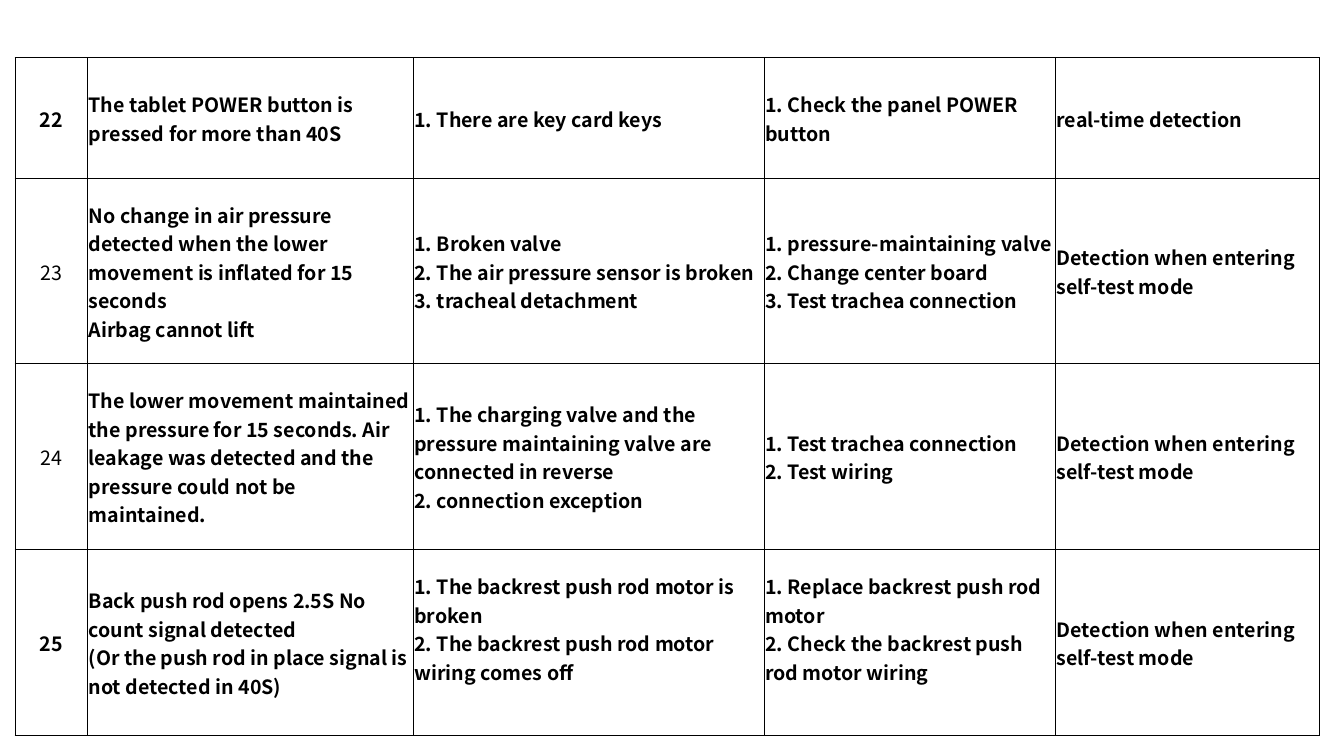
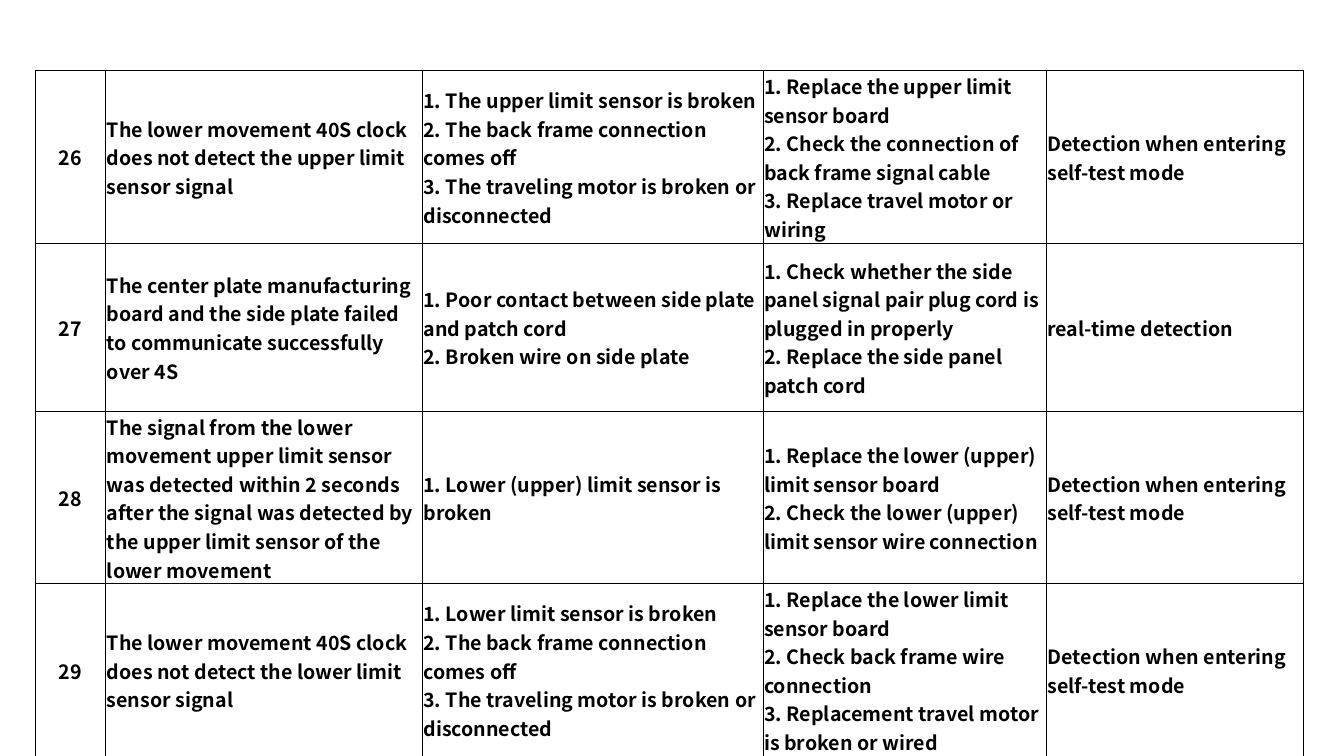
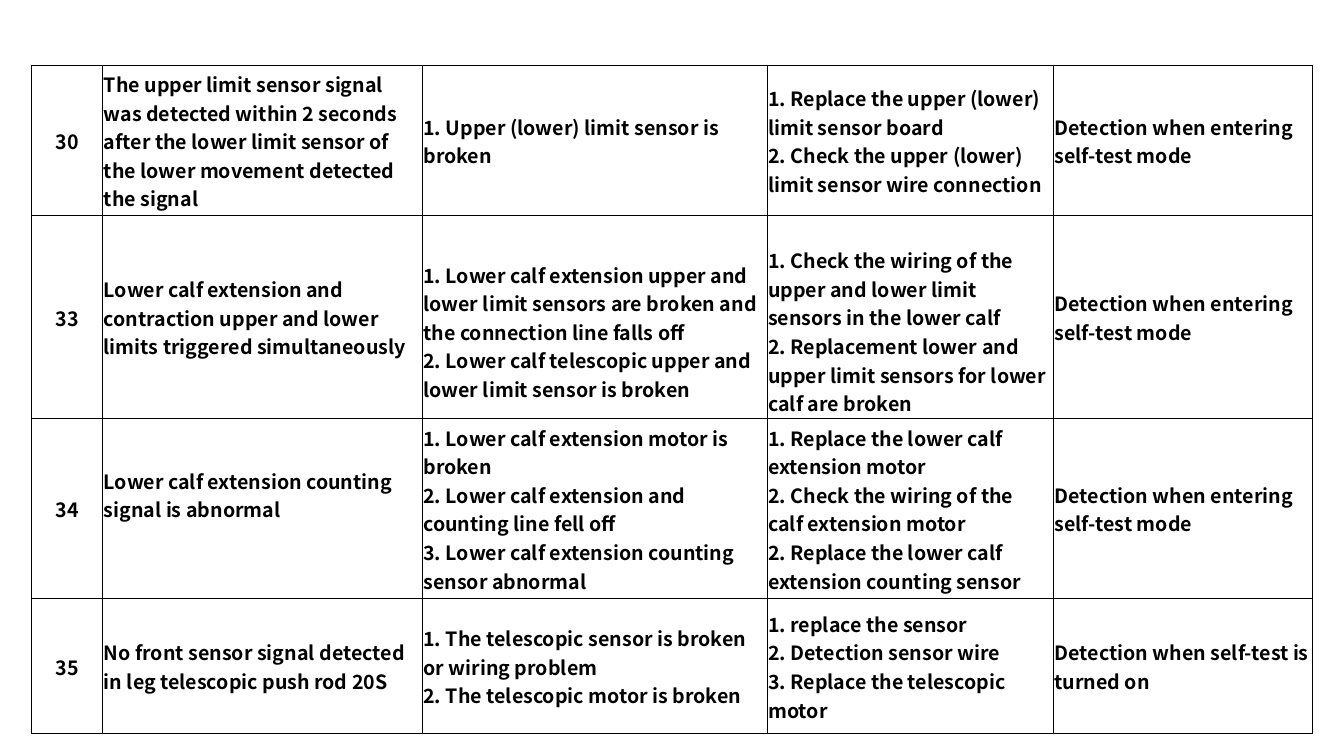
from dataclasses import dataclass

import pptx
import pptx.dml.color
import pptx.enum.text
import pptx.oxml
import pptx.oxml.ns
import pptx.util

PX = 9144  # EMU per px, 100 px to the inch


@dataclass(frozen=True)
class Theme:
    font: str = "Noto Sans CJK SC"
    size: int = 14
    ink: str = "000000"
    border_pt: float = 0.75
    inset: int = 1
    line: int = 28  # height of one text line, px


@dataclass(frozen=True)
class Fault:
    code: str
    symptom: str
    causes: str
    remedies: str
    timing: str
    bold_code: bool = True
    raised: tuple = ()   # columns with a free line below the text
    lowered: tuple = ()  # columns with a free line above the text


@dataclass(frozen=True)
class FaultTable:
    left: int
    top: int
    widths: tuple
    heights: tuple
    faults: tuple


THEME = Theme()
CODE, SYMPTOM, CAUSES, REMEDIES, TIMING = range(5)
SELF_TEST = "Detection when entering self-test mode"
REAL_TIME = "real-time detection"

# Content, one table to a slide
TABLES = (
    FaultTable(15, 57, (72, 323, 348, 289, 262), (120, 184, 184, 185), (
        Fault("22", "The tablet POWER button is pressed for more than 40S",
              "1. There are key card keys",
              "1. Check the panel POWER button", REAL_TIME),
        Fault("23",
              "No change in air pressure detected when the lower movement "
              "is inflated for 15 seconds\nAirbag cannot lift",
              "1. Broken valve\n2. The air pressure sensor is broken\n"
              "3. tracheal detachment",
              "1. pressure-maintaining valve\n2. Change center board\n"
              "3. Test trachea connection", SELF_TEST, bold_code=False),
        Fault("24",
              "The lower movement maintained the pressure for 15 seconds. "
              "Air leakage was detected and the pressure could not be "
              "maintained.",
              "1. The charging valve and the pressure maintaining valve are "
              "connected in reverse\n2. connection exception",
              "1. Test trachea connection\n2. Test wiring",
              SELF_TEST, bold_code=False),
        Fault("25",
              "Back push rod opens 2.5S No count signal detected\n"
              "(Or the push rod in place signal is not detected in 40S)",
              "1. The backrest push rod motor is broken\n"
              "2. The backrest push rod motor wiring comes off",
              "1. Replace backrest push rod motor\n"
              "2. Check the backrest push rod motor wiring",
              SELF_TEST, raised=(CAUSES, REMEDIES)),
    )),
    FaultTable(35, 70, (70, 314, 338, 281, 255), (167,) * 4, (
        Fault("26",
              "The lower movement 40S clock does not detect the upper limit "
              "sensor signal",
              "1. The upper limit sensor is broken\n"
              "2. The back frame connection comes off\n"
              "3. The traveling motor is broken or disconnected",
              "1. Replace the upper limit sensor board\n"
              "2. Check the connection of back frame signal cable\n"
              "3. Replace travel motor or wiring", SELF_TEST),
        Fault("27",
              "The center plate manufacturing board and the side plate "
              "failed to communicate successfully over 4S",
              "1. Poor contact between side plate and patch cord\n"
              "2. Broken wire on side plate",
              "1. Check whether the side panel signal pair plug cord is "
              "plugged in properly\n2. Replace the side panel patch cord",
              REAL_TIME),
        Fault("28",
              "The signal from the lower movement upper limit sensor was "
              "detected within 2 seconds after the signal was detected by "
              "the upper limit sensor of the lower movement",
              "1. Lower (upper) limit sensor is broken",
              "1. Replace the lower (upper) limit sensor board\n"
              "2. Check the lower (upper) limit sensor wire connection",
              SELF_TEST),
        Fault("29",
              "The lower movement 40S clock does not detect the lower limit "
              "sensor signal",
              "1. Lower limit sensor is broken\n"
              "2. The back frame connection comes off\n"
              "3. The traveling motor is broken or disconnected",
              "1. Replace the lower limit sensor board\n"
              "2. Check back frame wire connection\n"
              "3. Replacement travel motor is broken or wired", SELF_TEST),
    )),
    FaultTable(31, 65, (71, 317, 342, 284, 257), (149, 201, 179, 134), (
        Fault("30",
              "The upper limit sensor signal was detected within 2 seconds "
              "after the lower limit sensor of the lower movement detected "
              "the signal",
              "1. Upper (lower) limit sensor is broken",
              "1. Replace the upper (lower) limit sensor board\n"
              "2. Check the upper (lower) limit sensor wire connection",
              SELF_TEST),
        Fault("33",
              "Lower calf extension and contraction upper and lower limits "
              "triggered simultaneously",
              "1. Lower calf extension upper and lower limit sensors are "
              "broken and the connection line falls off\n"
              "2. Lower calf telescopic upper and lower limit sensor is "
              "broken",
              "1. Check the wiring of the upper and lower limit sensors in "
              "the lower calf\n2. Replacement lower and upper limit sensors "
              "for lower calf are broken",
              SELF_TEST, lowered=(CAUSES, REMEDIES)),
        Fault("34", "Lower calf extension counting signal is abnormal",
              "1. Lower calf extension motor is broken\n"
              "2. Lower calf extension and counting line fell off\n"
              "3. Lower calf extension counting sensor abnormal",
              "1. Replace the lower calf extension motor\n"
              "2. Check the wiring of the calf extension motor\n"
              "2. Replace the lower calf extension counting sensor",
              SELF_TEST, raised=(SYMPTOM,)),
        Fault("35",
              "No front sensor signal detected in leg telescopic push rod "
              "20S",
              "1. The telescopic sensor is broken or wiring problem\n"
              "2. The telescopic motor is broken",
              "1. replace the sensor\n2. Detection sensor wire\n"
              "3. Replace the telescopic motor",
              "Detection when self-test is turned on"),
    )),
)


def px(n):
    return pptx.util.Emu(n * PX)


def add_borders(cell):
    tc_pr = cell._tc.get_or_add_tcPr()
    width = int(pptx.util.Pt(THEME.border_pt))
    for side in "LRTB":
        tc_pr.append(pptx.oxml.parse_xml(
            f'<a:ln{side} {pptx.oxml.ns.nsdecls("a")} w="{width}">'
            f'<a:solidFill><a:srgbClr val="{THEME.ink}"/></a:solidFill>'
            f'</a:ln{side}>'))


def fill_cell(cell, text, bold, centred, above, below):
    add_borders(cell)
    cell.fill.background()
    cell.vertical_anchor = pptx.enum.text.MSO_ANCHOR.MIDDLE
    cell.margin_left = cell.margin_right = px(THEME.inset)
    cell.margin_top = px(THEME.inset + above)
    cell.margin_bottom = px(below)
    tf = cell.text_frame
    tf.text = text
    for p in tf.paragraphs:
        if centred:
            p.alignment = pptx.enum.text.PP_ALIGN.CENTER
        p.font.name = THEME.font
        p.font.size = pptx.util.Pt(THEME.size)
        p.font.bold = bold
        p.font.color.rgb = pptx.dml.color.RGBColor.from_string(THEME.ink)


def add_fault_table(slide, data):
    table = slide.shapes.add_table(
        len(data.heights), len(data.widths), px(data.left), px(data.top),
        px(sum(data.widths)), px(sum(data.heights))).table
    table.first_row = table.horz_banding = False
    for column, width in zip(table.columns, data.widths):
        column.width = px(width)
    for row, height, fault in zip(table.rows, data.heights, data.faults):
        row.height = px(height)
        texts = (fault.code, fault.symptom, fault.causes, fault.remedies,
                 fault.timing)
        for col, (cell, text) in enumerate(zip(row.cells, texts)):
            fill_cell(cell, text,
                      bold=fault.bold_code or col != CODE,
                      centred=col == CODE,
                      above=THEME.line * (col in fault.lowered),
                      below=THEME.line * (col in fault.raised))


def main():
    prs = pptx.Presentation()
    prs.slide_width, prs.slide_height = px(1333), px(750)
    blank = prs.slide_layouts[6]
    for data in TABLES:
        add_fault_table(prs.slides.add_slide(blank), data)
    prs.save("out.pptx")


if __name__ == "__main__":
    main()
